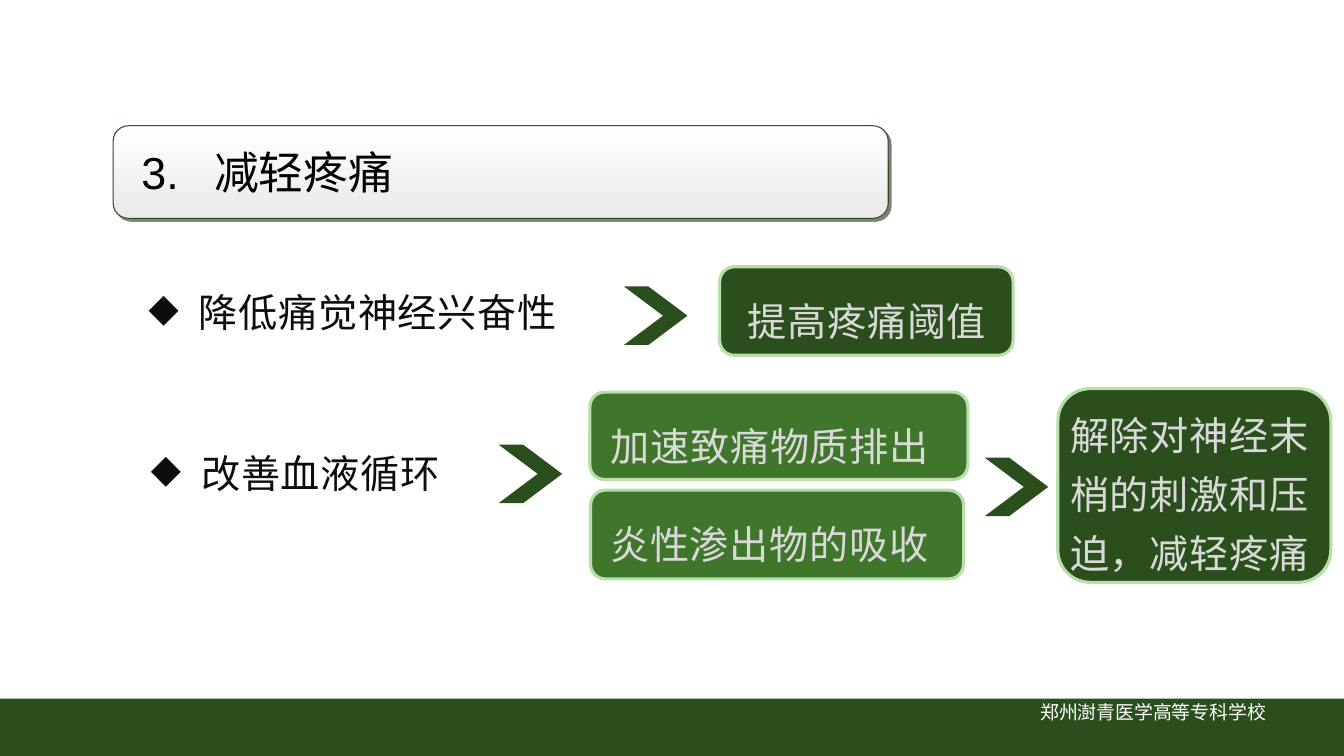
from lxml.etree import SubElement
from pptx import Presentation
from pptx.dml.color import RGBColor
from pptx.enum.shapes import MSO_SHAPE as Preset
from pptx.enum.text import MSO_ANCHOR as Anchor, PP_ALIGN as Align
from pptx.oxml.ns import qn
from pptx.util import Pt

COLORS = {
    "forest": "2A4F1C", "leaf": "3F762B", "mint": "B7E0A8", "white": "FFFFFF",
    "mist": "EAEAEA", "silver": "D9D9D9", "ink": "0D0D0D", "black": "000000",
}
CJK = "Noto Sans CJK SC"


def color(name):
    return RGBColor.from_string(COLORS[name])


class SlideBuilder:
    def __init__(self, slide):
        self.shapes = slide.shapes

    def shape(self, preset, left, top, width, height, fill, line=None, weight=2.25):
        shape = self.shapes.add_shape(preset, Pt(left), Pt(top), Pt(width), Pt(height))
        shape.shadow.inherit = False
        shape.fill.solid()
        shape.fill.fore_color.rgb = color(fill)
        if line:
            shape.line.color.rgb = color(line)
            shape.line.width = Pt(weight)
        else:
            shape.line.fill.background()
        return shape

    def label(self, shape, text, size, ink, insets=(7.2, 3.6, 7.2, 3.6),
              anchor=Anchor.TOP, align=Align.LEFT, latin=CJK, body=False,
              bullet=None, tab=None):
        frame = shape.text_frame
        frame.word_wrap = True
        frame.vertical_anchor = anchor
        (frame.margin_left, frame.margin_top,
         frame.margin_right, frame.margin_bottom) = map(Pt, insets)
        paragraph = frame.paragraphs[0]
        paragraph.text = text
        paragraph.alignment = align
        if body:
            paragraph.line_spacing = 1.25
            paragraph.space_after = Pt(8)
        properties = paragraph._p.get_or_add_pPr()
        if bullet:
            properties.set("marL", str(Pt(36)))
            properties.set("indent", str(-Pt(36)))
            SubElement(properties, qn("a:buChar"), char=bullet)
        if tab:
            stops = SubElement(properties, qn("a:tabLst"))
            SubElement(stops, qn("a:tab"), pos=str(Pt(tab)), algn="l")
        font = paragraph.font
        font.size = Pt(size)
        font.name = latin
        font.color.rgb = color(ink)
        defaults = properties.find(qn("a:defRPr"))
        SubElement(defaults, qn("a:ea"), typeface=CJK)
        if body:
            defaults.set("spc", "50")

    def text_box(self, left, top, width, height, text, size, ink, **style):
        box = self.shapes.add_textbox(Pt(left), Pt(top), Pt(width), Pt(height))
        self.label(box, text, size, ink, **style)

    def title(self, left, top, width, height, text):
        panel = self.shape(Preset.ROUNDED_RECTANGLE, left, top, width, height,
                           "white", "forest", 0.75)
        panel.fill.gradient()
        panel.fill.gradient_angle = 270
        for stop, name in zip(panel.fill.gradient_stops, ("white", "mist")):
            stop.color.rgb = color(name)
        effects = panel._element.spPr.find(qn("a:effectLst"))
        shadow = SubElement(effects, qn("a:outerShdw"), dist=str(Pt(2.8)),
                            dir="2700000", algn="ctr", rotWithShape="0")
        tint = SubElement(shadow, qn("a:srgbClr"), val=COLORS["black"])
        SubElement(tint, qn("a:alpha"), val="50000")
        self.label(panel, text, 32, "black", insets=(17, 3.6, 7.2, 3.6),
                   anchor=Anchor.MIDDLE, latin="Arial", tab=52)

    def cause(self, left, top, width, text):
        self.text_box(left, top, width, 78.5, text, 28, "ink",
                      insets=(8.64, 2.88, 8.64, 2.88), anchor=Anchor.MIDDLE,
                      align=Align.CENTER, body=True, bullet="◆")

    def effect(self, left, top, width, height, text, fill, insets):
        box = self.shape(Preset.ROUNDED_RECTANGLE, left, top, width, height,
                         fill, "mint")
        self.label(box, text, 28, "silver", insets=insets, body=True)

    def chevron(self, left, top):
        arrow = self.shape(Preset.CHEVRON, left, top, 45.4, 41.8, "forest")
        arrow.adjustments[0] = 0.668


def main():
    deck = Presentation()
    deck.slide_width, deck.slide_height = Pt(960), Pt(540)
    page = SlideBuilder(deck.slides.add_slide(deck.slide_layouts[6]))

    page.shape(Preset.RECTANGLE, 0, 499, 960, 41, "forest")
    page.text_box(687.6, 496.8, 272.4, 33, "郑州澍青医学高等专科学校", 13.5, "white",
                  align=Align.CENTER)
    page.title(80.8, 89.8, 553.7, 66.2, "3.\t减轻疼痛")

    page.cause(36, 179.3, 432, "降低痛觉神经兴奋性")
    page.cause(64.1, 294.5, 293.8, "改善血液循环")
    for left, top in ((445.7, 204.6), (356.2, 317.6), (703.4, 326.9)):
        page.chevron(left, top)

    page.effect(514.1, 190.6, 209.6, 63.2, "提高疼痛阈值", "forest", (17, 10, 0, 0))
    page.effect(421.3, 280.1, 270, 62.4, "加速致痛物质排出", "leaf", (12, 10, 0, 0))
    page.effect(421.9, 350.1, 266.4, 63.4, "炎性渗出物的吸收", "leaf", (11, 10, 0, 0))
    page.effect(755.6, 277.6, 195, 138.4, "解除对神经末梢的刺激和压迫，减轻疼痛",
                "forest", (2, 1, 2, 0))
    deck.save("out.pptx")


if __name__ == "__main__":
    main()
